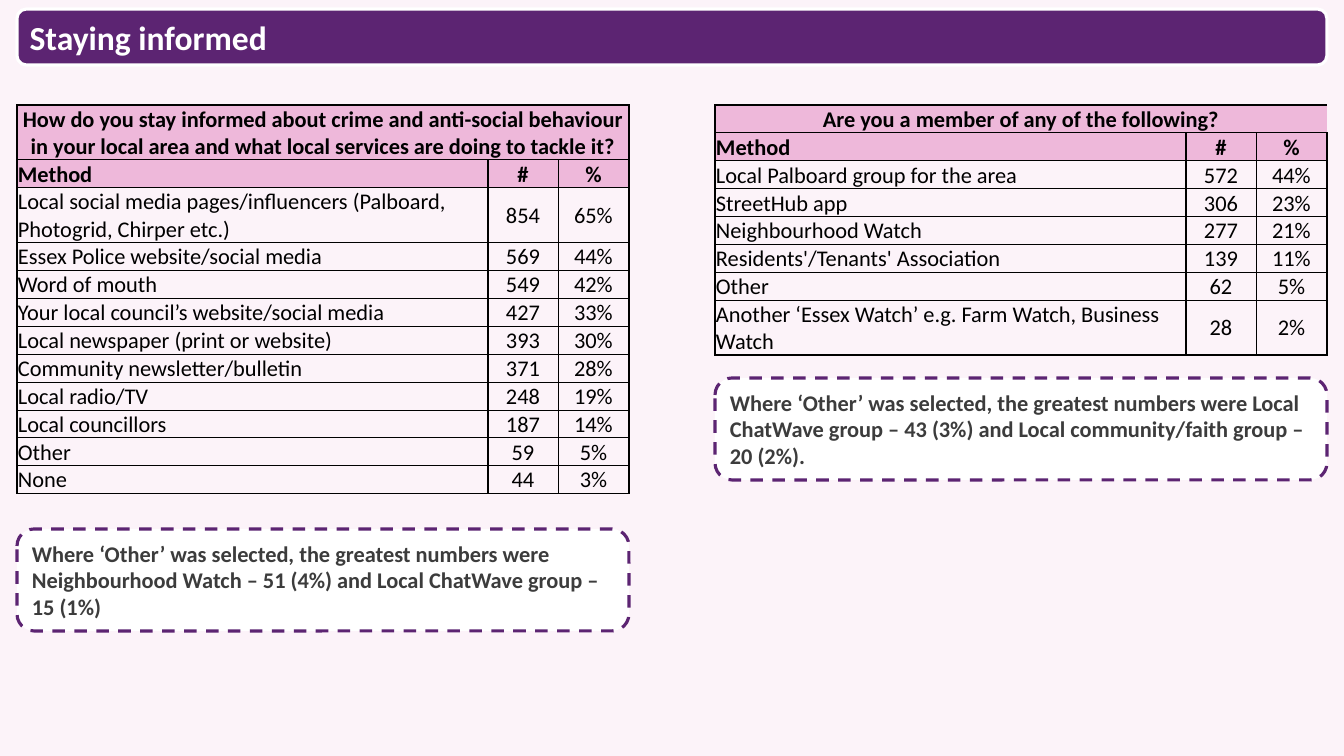
import pptx
import pptx.dml.color
import pptx.enum.dml
import pptx.enum.shapes
import pptx.enum.text
import pptx.oxml
import pptx.oxml.ns
import pptx.util
from dataclasses import dataclass

PX = 914400 / 100.8
ALIGN = pptx.enum.text.PP_ALIGN
ANCHOR = pptx.enum.text.MSO_ANCHOR


@dataclass(frozen=True)
class Theme:
    font: str = "Calibri"
    page: str = "FCF3F9"
    purple: str = "5C2472"
    pink: str = "EEB8DA"
    white: str = "FFFFFF"
    black: str = "000000"
    grey: str = "3C3C3C"
    title_size: int = 24
    body_size: int = 16


theme = Theme()
rgb = pptx.dml.color.RGBColor.from_string


def write(frame, text, size, colour, bold, align):
    frame.word_wrap = True
    para = frame.paragraphs[0]
    para.alignment = align
    span = para.add_run()
    span.text = text
    span.font.name = theme.font
    span.font.size = pptx.util.Pt(size)
    span.font.bold = bold
    span.font.color.rgb = rgb(colour)


def draw_border(cell, side, points):
    """Call in the order L, R, T, B and before filling, as the schema requires."""
    cell._tc.get_or_add_tcPr().append(pptx.oxml.parse_xml(
        f'<a:ln{side} {pptx.oxml.ns.nsdecls("a")} w="{int(points * 12700)}">'
        f'<a:solidFill><a:srgbClr val="{theme.black}"/></a:solidFill></a:ln{side}>'))


deck = pptx.Presentation()
deck.slide_width = round(1344 * PX)
deck.slide_height = round(756 * PX)
page = deck.slides.add_slide(deck.slide_layouts[6])
page.background.fill.solid()
page.background.fill.fore_color.rgb = rgb(theme.page)

LEFT, RIGHT, TABLE_TOP = 17, 715, 105
COLUMN_WIDTHS = (471, 70, 71)
PANEL_WIDTH = sum(COLUMN_WIDTHS)
LINE_HEIGHT = 27
NO_STYLE = "{2D5ABB26-0587-4C30-8999-92F81FD0307C}"

# Title bar and notes: text, place, fill, line, text size, text colour, dash
SOLID = pptx.enum.dml.MSO_LINE.SOLID
DASH = pptx.enum.dml.MSO_LINE.DASH
note_style = (theme.white, theme.purple, theme.body_size, theme.grey, DASH)
boxes = [
    ("Staying informed", (LEFT, 9, RIGHT + PANEL_WIDTH - LEFT, 56),
     theme.purple, theme.white, theme.title_size, theme.white, SOLID),
    ("Where ‘Other’ was selected, the greatest numbers were Local ChatWave group "
     "– 43 (3%) and Local community/faith group – 20 (2%).",
     (RIGHT, 378, PANEL_WIDTH, 102), *note_style),
    ("Where ‘Other’ was selected, the greatest numbers were Neighbourhood Watch "
     "– 51 (4%) and Local ChatWave group – 15 (1%)",
     (LEFT, 529, PANEL_WIDTH, 102), *note_style),
]
for text, place, fill, line, size, colour, dash in boxes:
    box = page.shapes.add_shape(pptx.enum.shapes.MSO_SHAPE.ROUNDED_RECTANGLE,
                                *(round(length * PX) for length in place))
    box.shadow.inherit = False
    box.fill.solid()
    box.fill.fore_color.rgb = rgb(fill)
    box.line.color.rgb = rgb(line)
    box.line.width = pptx.util.Pt(2.25)
    box.line.dash_style = dash
    box.text_frame.vertical_anchor = ANCHOR.MIDDLE
    write(box.text_frame, text, size, colour, True, ALIGN.LEFT)
    box.text_frame.auto_size = pptx.enum.text.MSO_AUTO_SIZE.SHAPE_TO_FIT_TEXT

# Survey tables: left, question, whether the question is closed on the right,
# rows that take two lines, answers
surveys = [
    (LEFT, "How do you stay informed about crime and anti-social behaviour in your "
     "local area and what local services are doing to tackle it?", True, (0, 2), [
         ("Local social media pages/influencers (Palboard, Photogrid, Chirper etc.)",
          "854", "65%"),
         ("Essex Police website/social media", "569", "44%"),
         ("Word of mouth", "549", "42%"),
         ("Your local council’s website/social media", "427", "33%"),
         ("Local newspaper (print or website)", "393", "30%"),
         ("Community newsletter/bulletin", "371", "28%"),
         ("Local radio/TV", "248", "19%"),
         ("Local councillors", "187", "14%"),
         ("Other", "59", "5%"),
         ("None", "44", "3%"),
     ]),
    (RIGHT, "Are you a member of any of the following?", False, (7,), [
        ("Local Palboard group for the area", "572", "44%"),
        ("StreetHub app", "306", "23%"),
        ("Neighbourhood Watch", "277", "21%"),
        ("Residents'/Tenants' Association", "139", "11%"),
        ("Other", "62", "5%"),
        ("Another ‘Essex Watch’ e.g. Farm Watch, Business Watch", "28", "2%"),
    ]),
]
for left, question, closed, tall_rows, answers in surveys:
    rows = [(question, "", ""), ("Method", "#", "%"), *answers]
    last = len(rows) - 1
    heights = [LINE_HEIGHT * (2 if row in tall_rows else 1) for row in range(len(rows))]
    table = page.shapes.add_table(
        len(rows), len(COLUMN_WIDTHS), round(left * PX), round(TABLE_TOP * PX),
        round(PANEL_WIDTH * PX), round(sum(heights) * PX)).table
    table.first_row = table.horz_banding = False
    table._tbl.tblPr.find(pptx.oxml.ns.qn("a:tableStyleId")).text = NO_STYLE
    for column, width in zip(table.columns, COLUMN_WIDTHS):
        column.width = round(width * PX)
    for table_row, height in zip(table.rows, heights):
        table_row.height = round(height * PX)
    table.cell(0, 0).merge(table.cell(0, 2))

    for row, texts in enumerate(rows):
        heading = row < 2
        for column, text in enumerate(texts):
            cell = table.cell(row, column)
            cell.margin_left = cell.margin_right = cell.margin_top = round(PX)
            cell.margin_bottom = 0
            borders = {
                "L": 0.5 if column == 2 else 1,
                "R": 0.5 if column == 1 else 1,
                "T": 1 if row <= 2 else 0.5,
                "B": 1 if heading or row == last else 0.5,
            }
            if row == 0 and not closed:
                del borders["R"]
            for side, points in borders.items():
                draw_border(cell, side, points)
            if heading:
                cell.fill.solid()
                cell.fill.fore_color.rgb = rgb(theme.pink)
            else:
                cell.fill.background()
            label = column == 0 and row > 0
            cell.vertical_anchor = ANCHOR.BOTTOM if label and not heading else ANCHOR.MIDDLE
            if text:
                write(cell.text_frame, text, theme.body_size, theme.black, heading,
                      ALIGN.LEFT if label else ALIGN.CENTER)

deck.save("out.pptx")
